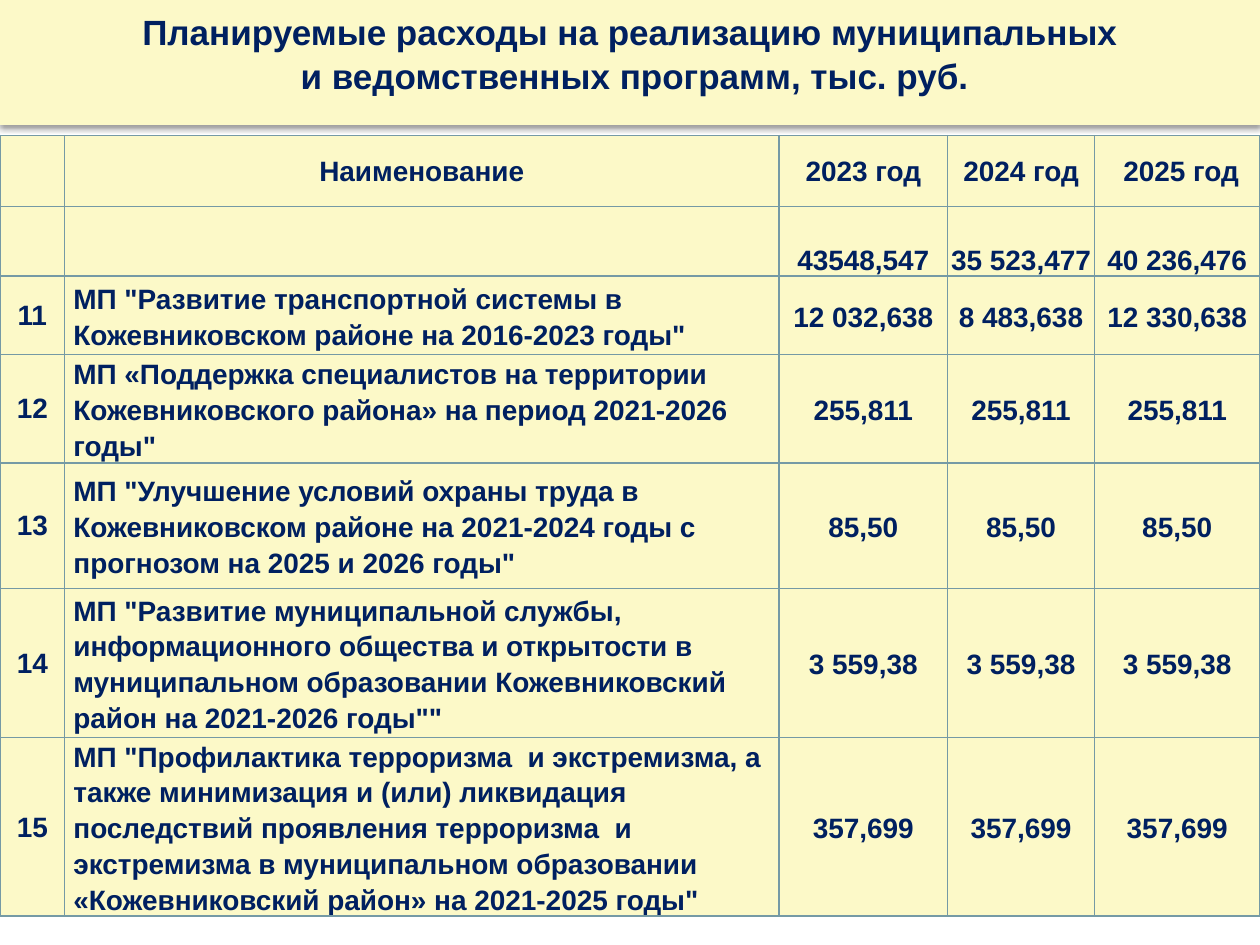
import pptx
import pptx.util
import pptx.oxml
import pptx.oxml.ns
import pptx.dml.color
import pptx.enum.text
import pptx.enum.shapes
import lxml.etree

Pt = pptx.util.Pt
Rgb = pptx.dml.color.RGBColor.from_string
Align = pptx.enum.text.PP_ALIGN
Anchor = pptx.enum.text.MSO_ANCHOR

# Content
TITLE = ["Планируемые расходы на реализацию муниципальных",
         " и ведомственных программ, тыс. руб."]
HEAD = ["", "Наименование", "2023 год", "2024 год", " 2025 год"]
TOTAL = ["", "", "43548,547", "35 523,477", "40 236,476"]
PLANS = [
    ["11", 'МП "Развитие транспортной системы в Кожевниковском районе '
           'на 2016-2023 годы"',
     "12 032,638", "8 483,638", "12 330,638"],
    ["12", 'МП «Поддержка специалистов на территории Кожевниковского района» '
           'на период 2021-2026 годы"'] + ["255,811"] * 3,
    ["13", 'МП "Улучшение условий охраны труда в Кожевниковском районе '
           'на 2021-2024 годы с прогнозом на 2025 и 2026 годы"'] + ["85,50"] * 3,
    ["14", 'МП "Развитие муниципальной службы, информационного общества '
           'и открытости в муниципальном образовании Кожевниковский район '
           'на 2021-2026 годы""'] + ["3 559,38"] * 3,
    ["15", 'МП "Профилактика терроризма  и экстремизма, а также минимизация '
           'и (или) ликвидация последствий проявления терроризма  и экстремизма '
           'в муниципальном образовании «Кожевниковский район» '
           'на 2021-2025 годы"'] + ["357,699"] * 3,
]
ROWS = [HEAD, TOTAL] + PLANS

# Theme and sizes, in points
THEME = {"font": "Arial", "ink": "002060", "fill": "FCF9C8", "line": "759AA5",
         "shade": "000000", "title": 20, "body": 16, "rule": 1}
WIDE, HIGH = 720, 540
BAND = 71.4
TOP = 77.5
COLS = [36.9, 408.3, 96.3, 84, 94.5]
TALL = [40.5, 39.7, 44.9, 62, 71.7, 85.1, 92.2]

# Cell formats
TIGHT = {"margin_left": Pt(0.7), "margin_right": Pt(0.7),
         "margin_top": Pt(0.7), "margin_bottom": Pt(0)}
LOOSE = {"margin_left": Pt(5.1), "margin_right": Pt(5.1),
         "margin_top": Pt(0), "margin_bottom": Pt(0)}
MID = {"vertical_anchor": Anchor.MIDDLE}
LOW = {"vertical_anchor": Anchor.BOTTOM}


def put(item, vals):
    for key, val in vals.items():
        setattr(item, key, val)


def paint(item):
    item.fill.solid()
    item.fill.fore_color.rgb = Rgb(THEME["fill"])


def write(para, text, size, **vals):
    put(para, vals)
    run = para.add_run()
    run.text = text
    put(run.font, {"name": THEME["font"], "size": Pt(THEME[size]), "bold": True})
    run.font.color.rgb = Rgb(THEME["ink"])


def node(base, tag, **attrs):
    return lxml.etree.SubElement(base, pptx.oxml.ns.qn("a:" + tag), attrs)


def tint(base, color):
    return node(base, "srgbClr", val=THEME[color])


def frame(cell):
    """Draw the four borders; they come before the fill in the XML."""
    props = cell._tc.get_or_add_tcPr()
    for spot, side in enumerate(("lnL", "lnR", "lnT", "lnB")):
        line = node(props, side, w=str(Pt(THEME["rule"])))
        tint(node(line, "solidFill"), "line")
        props.insert(spot, line)


def shade(shape):
    """Soft shadow straight down."""
    shape.shadow.inherit = False
    soft = node(shape._element.spPr.find(pptx.oxml.ns.qn("a:effectLst")),
                "outerShdw", blurRad=str(Pt(3.1)), dist=str(Pt(2)),
                dir="5400000", rotWithShape="0")
    node(tint(soft, "shade"), "alpha", val="38000")


deck = pptx.Presentation()
put(deck, {"slide_width": Pt(WIDE), "slide_height": Pt(HIGH)})
slide = deck.slides.add_slide(deck.slide_layouts[6])

# Table of programmes
table = slide.shapes.add_table(len(ROWS), len(COLS), Pt(0), Pt(TOP),
                               Pt(WIDE), Pt(sum(TALL))).table
put(table, {"first_row": False, "horz_banding": False})
for col, size in zip(table.columns, COLS):
    col.width = Pt(size)
for row, size in zip(table.rows, TALL):
    row.height = Pt(size)

for r, texts in enumerate(ROWS):
    for c, text in enumerate(texts):
        cell = table.cell(r, c)
        plan = r > 1 and c > 0
        paint(cell)
        frame(cell)
        put(cell, LOOSE if plan else TIGHT)
        put(cell, LOW if r == 1 else MID)
        if text:
            write(cell.text_frame.paragraphs[0], text, "body",
                  alignment=Align.LEFT if plan and c == 1 else Align.CENTER,
                  line_spacing=1.15 if plan else 1.0)

# Title band
band = slide.shapes.add_shape(pptx.enum.shapes.MSO_SHAPE.RECTANGLE,
                              Pt(0), Pt(0), Pt(WIDE), Pt(BAND))
paint(band)
band.line.fill.background()
shade(band)
body = band.text_frame
put(body, {"word_wrap": True, "vertical_anchor": Anchor.TOP, "margin_top": Pt(6)})
for i, text in enumerate(TITLE):
    para = body.add_paragraph() if i else body.paragraphs[0]
    write(para, text, "title", alignment=Align.CENTER, space_before=Pt(i))

deck.save("out.pptx")
